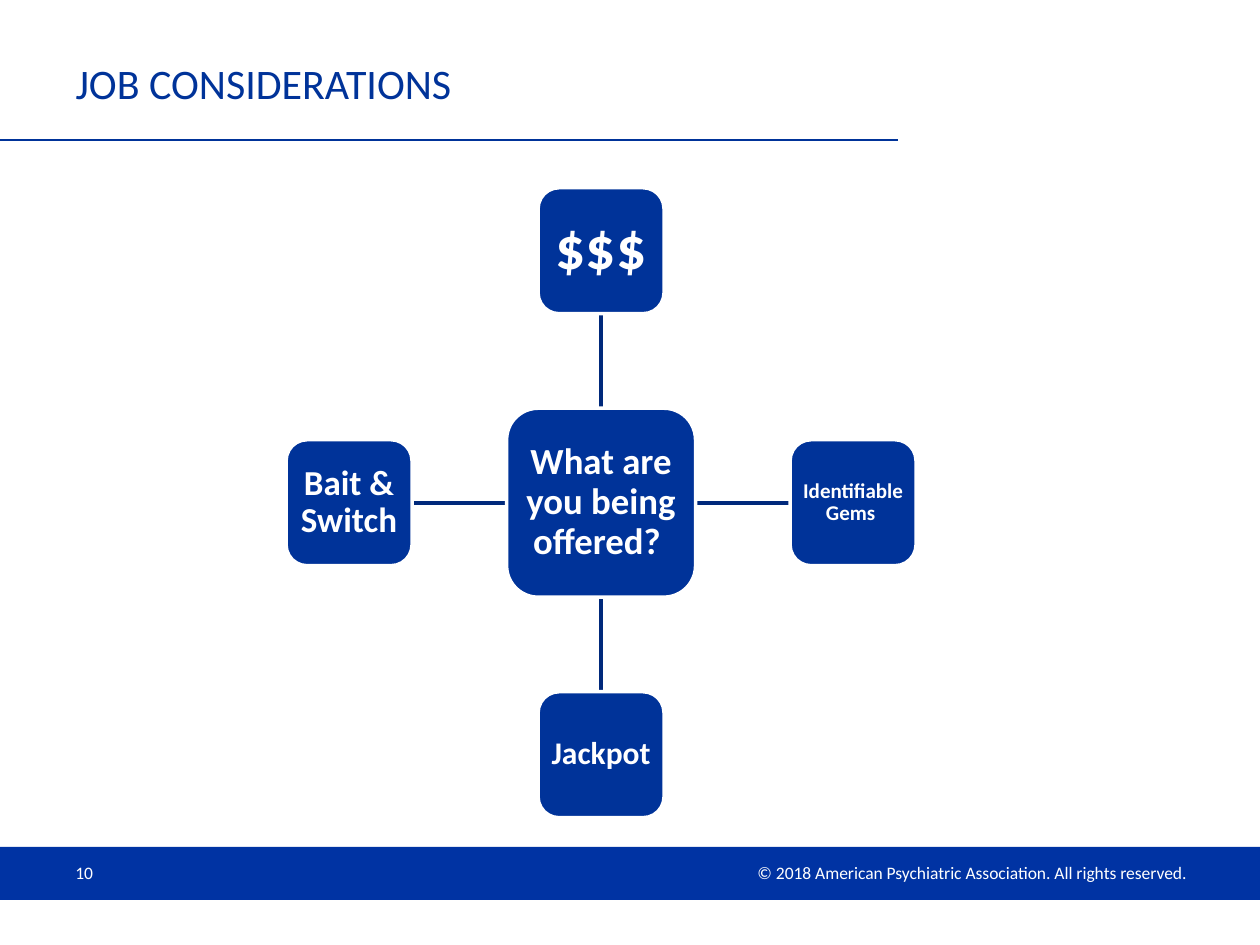
"""Build the job considerations slide: a hub question with four linked answers."""
from lxml.etree import SubElement
from pptx import Presentation
from pptx.dml.color import RGBColor
from pptx.enum.shapes import MSO_CONNECTOR, MSO_SHAPE
from pptx.enum.text import MSO_ANCHOR, PP_ALIGN
from pptx.oxml.ns import qn
from pptx.util import Pt

BLUE, BAND_BLUE, LINK_BLUE, WHITE = "003399", "0033A3", "00297B", "FFFFFF"
HUB_X, HUB_Y, HUB_SIZE = 343.5, 287.3, 108
ANSWER_SIZE, ARM = 72, 144
TOP, LEFT, BOTTOM, RIGHT = range(4)
DIRECTIONS = {TOP: (0, -1), LEFT: (-1, 0), BOTTOM: (0, 1), RIGHT: (1, 0)}
ANSWERS = [
    (TOP, "$$$", 34, 6.5),
    (RIGHT, "Identifiable Gems ", 12, 2.2),
    (BOTTOM, "Jackpot", 18, 3.6),
    (LEFT, "Bait & Switch", 20, 4.3),
]


def rgb(value):
    """Turn a hex string into a colour."""
    return RGBColor.from_string(value)


class SlideBuilder:
    """Hold the style and the current slide."""

    font = "Calibri"

    def __init__(self, slide):
        """Keep the slide to draw on."""
        self.slide = slide

    def set_text(self, frame, text, size, color, align=PP_ALIGN.LEFT, bold=False):
        """Fill a text frame with one vertically centred paragraph."""
        frame.text = text
        frame.word_wrap = True
        frame.vertical_anchor = MSO_ANCHOR.MIDDLE
        paragraph = frame.paragraphs[0]
        paragraph.alignment = align
        for run in paragraph.runs:
            run.font.name, run.font.size, run.font.bold = self.font, Pt(size), bold
            run.font.color.rgb = rgb(color)
        return paragraph

    def title(self, text, left, top, width, height):
        """Place and format the title placeholder."""
        heading = self.slide.shapes.title
        heading.left, heading.top = Pt(left), Pt(top)
        heading.width, heading.height = Pt(width), Pt(height)
        self.set_text(heading.text_frame, text, 24, BLUE)

    def label(self, text, left, top, width, height, align=PP_ALIGN.LEFT):
        """Add a small white footer text."""
        footer = self.slide.shapes.add_textbox(Pt(left), Pt(top), Pt(width), Pt(height))
        self.set_text(footer.text_frame, text, 10, WHITE, align)

    def block(self, kind, left, top, width, height, fill):
        """Add a filled shape without outline or shadow."""
        block = self.slide.shapes.add_shape(kind, Pt(left), Pt(top), Pt(width), Pt(height))
        block.shadow.inherit = False
        block.fill.solid()
        block.fill.fore_color.rgb = rgb(fill)
        block.line.fill.background()
        return block

    def node(self, text, center_x, center_y, side, size, inset):
        """Add a rounded square with bold centred text around a centre point."""
        node = self.block(MSO_SHAPE.ROUNDED_RECTANGLE, center_x - side / 2,
                          center_y - side / 2, side, side, BLUE)
        node.line.color.rgb = rgb(WHITE)
        node.line.width = Pt(2)
        frame = node.text_frame
        frame.margin_left = frame.margin_right = Pt(inset)
        frame.margin_top = frame.margin_bottom = Pt(inset)
        self.set_text(frame, text, size, WHITE, PP_ALIGN.CENTER, True).line_spacing = 0.9
        return node

    def line(self, start_x, start_y, end_x, end_y, color, width):
        """Add a straight line without shadow."""
        line = self.slide.shapes.add_connector(
            MSO_CONNECTOR.STRAIGHT, Pt(start_x), Pt(start_y), Pt(end_x), Pt(end_y))
        line.line.color.rgb = rgb(color)
        line.line.width = Pt(width)
        SubElement(line._element.spPr, qn("a:effectLst"))
        return line


def main():
    """Build and save the slide."""
    deck = Presentation()
    deck.slide_width, deck.slide_height = Pt(720), Pt(540)
    builder = SlideBuilder(deck.slides.add_slide(deck.slide_layouts[5]))

    builder.block(MSO_SHAPE.RECTANGLE, 0, 484, 720, 30.2, BAND_BLUE)
    builder.line(0, 80, 513.2, 80, BLUE, 0.75)
    builder.label("© 2018 American Psychiatric Association. All rights reserved.",
                  373, 489, 312, 19.4, PP_ALIGN.RIGHT)
    builder.label("10", 36, 484, 168, 29)
    builder.title("JOB CONSIDERATIONS", 36, 24.5, 477, 46)

    links = {}
    for side, (step_x, step_y) in DIRECTIONS.items():
        links[side] = builder.line(HUB_X, HUB_Y, HUB_X + ARM * step_x,
                                   HUB_Y + ARM * step_y, LINK_BLUE, 2)
    hub = builder.node("What are you being offered? ", HUB_X, HUB_Y, HUB_SIZE, 21, 4.3)
    for side, text, size, inset in ANSWERS:
        step_x, step_y = DIRECTIONS[side]
        answer = builder.node(text, HUB_X + ARM * step_x, HUB_Y + ARM * step_y,
                              ANSWER_SIZE, size, inset)
        links[side].begin_connect(hub, side)
        links[side].end_connect(answer, (side + 2) % 4)

    deck.save("out.pptx")


if __name__ == "__main__":
    main()
